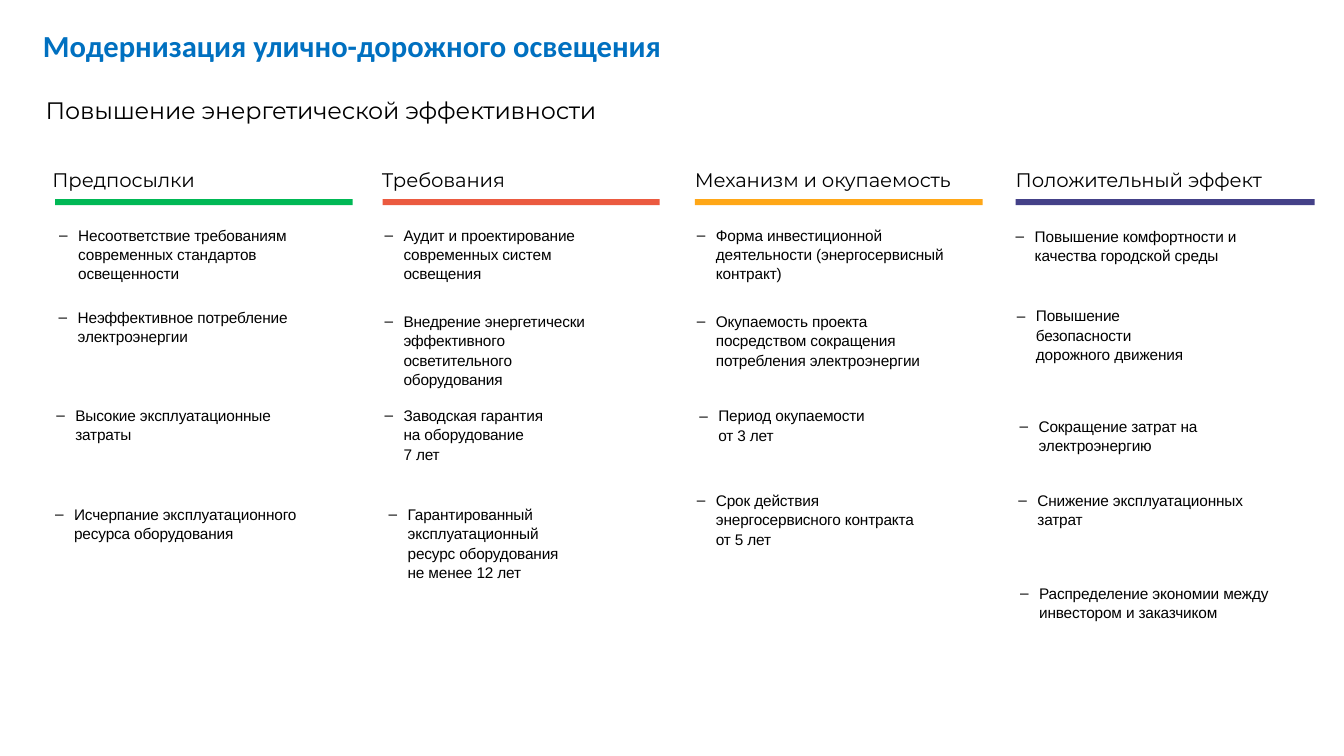
from pptx import Presentation
from pptx.dml.color import RGBColor
from pptx.enum.shapes import MSO_SHAPE
from pptx.util import Cm, Pt
from lxml import etree

RECTANGLE = MSO_SHAPE.RECTANGLE

COLORS = {"title": "0070C0", "text": "000000", "green": "00B855",
          "red": "EB5A40", "orange": "FFA717", "violet": "444188"}

# Content: lengths in cm
TITLE = ("Модернизация улично-дорожного освещения", 1.73, 1.09, 48.39, 1.6)
SUBTITLE = ("Повышение энергетической эффективности", 1.85, 3.91, 38.13, 1.25)

# heading, heading left, bar left, bar width, colour, points
# point: text, left, top, width, number of lines
COLUMNS = [
    ("Предпосылки", 2.13, 2.29, 12.37, "green", [
        ("Несоответствие требованиям современных стандартов освещенности", 2.41, 9.3, 9.8, 3),
        ("Неэффективное потребление электроэнергии", 2.39, 12.7, 9.86, 2),
        ("Высокие эксплуатационные затраты", 2.29, 16.79, 9.22, 2),
        ("Исчерпание эксплуатационного ресурса оборудования", 2.24, 20.9, 10.39, 2),
    ]),
    ("Требования", 15.82, 15.9, 11.51, "red", [
        ("Аудит и проектирование современных систем освещения", 15.93, 9.3, 8.2, 3),
        ("Внедрение энергетически эффективного осветительного оборудования",
         15.93, 12.88, 8.66, 4),
        ("Заводская гарантия на оборудование\v7 лет", 15.93, 16.79, 6.86, 3),
        ("Гарантированный эксплуатационный ресурс оборудования не менее 12 лет",
         16.1, 20.9, 7.37, 4),
    ]),
    ("Механизм и окупаемость", 28.83, 28.88, 11.96, "orange", [
        ("Форма инвестиционной деятельности (энергосервисный контракт)", 28.91, 9.3, 10.62, 3),
        ("Окупаемость проекта посредством сокращения потребления электроэнергии",
         28.91, 12.88, 9.63, 3),
        ("Период окупаемости от 3 лет", 29.01, 16.81, 7.11, 2),
        ("Срок действия энергосервисного контракта от 5 лет", 28.91, 20.32, 9.35, 3),
    ]),
    ("Положительный эффект", 42.16, 42.21, 12.42, "violet", [
        ("Повышение комфортности и качества городской среды", 42.16, 9.35, 9.78, 2),
        ("Повышение безопасности дорожного движения", 42.21, 12.65, 7.16, 3),
        ("Сокращение затрат на электроэнергию", 42.32, 17.25, 7.67, 2),
        ("Снижение эксплуатационных затрат", 42.27, 20.32, 9.65, 2),
        ("Распределение экономии между инвестором и заказчиком", 42.34, 24.18, 10.72, 2),
    ]),
]
HEADING_TOP, HEADING_HEIGHT = 6.93, 1.04
BAR_TOP, BAR_HEIGHT = 8.28, 0.25
LINE_HEIGHT = 0.79

# Formats
TITLE_FONT = {"name": "Calibri", "size": Pt(36), "bold": True}
SUBTITLE_FONT = {"name": "Montserrat", "size": Pt(28)}
HEADING_FONT = {"name": "Montserrat", "size": Pt(23.1)}
POINT_FONT = {"name": "Arial", "size": Pt(18.1)}
FRAME = {"word_wrap": True, "margin_left": 0, "margin_top": Cm(0.05),
         "margin_right": 0, "margin_bottom": 0}
DRAWING_NS = "{http://schemas.openxmlformats.org/drawingml/2006/main}"


def apply(target, values):
    for key, value in values.items():
        setattr(target, key, value)


def add_text(slide, content, font, color="text", spacing=-20):
    text, *box = content
    frame = slide.shapes.add_textbox(*map(Cm, box)).text_frame
    apply(frame, FRAME)
    paragraph = frame.paragraphs[0]
    paragraph.text = text
    paragraph.space_before = Pt(1.6)
    properties = paragraph._p.get_or_add_pPr()
    properties.set("marL", str(Cm(0.05)))
    for run in paragraph.runs:
        apply(run.font, font)
        run.font.color.rgb = RGBColor.from_string(COLORS[color])
        run._r.get_or_add_rPr().set("spc", str(spacing))
    return paragraph


def add_point(slide, text, left, top, width, lines):
    height = lines * LINE_HEIGHT + 0.05
    paragraph = add_text(slide, (text, left, top, width, height), POINT_FONT)
    paragraph.line_spacing = 1.05
    properties = paragraph._p.get_or_add_pPr()
    properties.set("marL", str(Cm(0.84)))
    properties.set("indent", str(Cm(-0.79)))
    etree.SubElement(properties, DRAWING_NS + "buFont", typeface="Arial")
    etree.SubElement(properties, DRAWING_NS + "buChar", char="–")


def add_bar(slide, left, width, color):
    bar = slide.shapes.add_shape(RECTANGLE, Cm(left), Cm(BAR_TOP), Cm(width), Cm(BAR_HEIGHT))
    bar.shadow.inherit = False
    bar.fill.solid()
    bar.fill.fore_color.rgb = RGBColor.from_string(COLORS[color])
    bar.line.fill.background()


def main():
    deck = Presentation()
    deck.slide_width, deck.slide_height = Cm(55.85), Cm(31.42)
    slide = deck.slides.add_slide(deck.slide_layouts[6])

    # Title and subtitle
    add_text(slide, TITLE, TITLE_FONT, "title", 0)
    add_text(slide, SUBTITLE, SUBTITLE_FONT)

    # Four columns: heading, coloured bar, points
    for heading, heading_left, bar_left, bar_width, color, points in COLUMNS:
        add_text(slide, (heading, heading_left, HEADING_TOP, bar_width, HEADING_HEIGHT),
                 HEADING_FONT)
        add_bar(slide, bar_left, bar_width, color)
        for point in points:
            add_point(slide, *point)

    deck.save("out.pptx")


if __name__ == "__main__":
    main()
